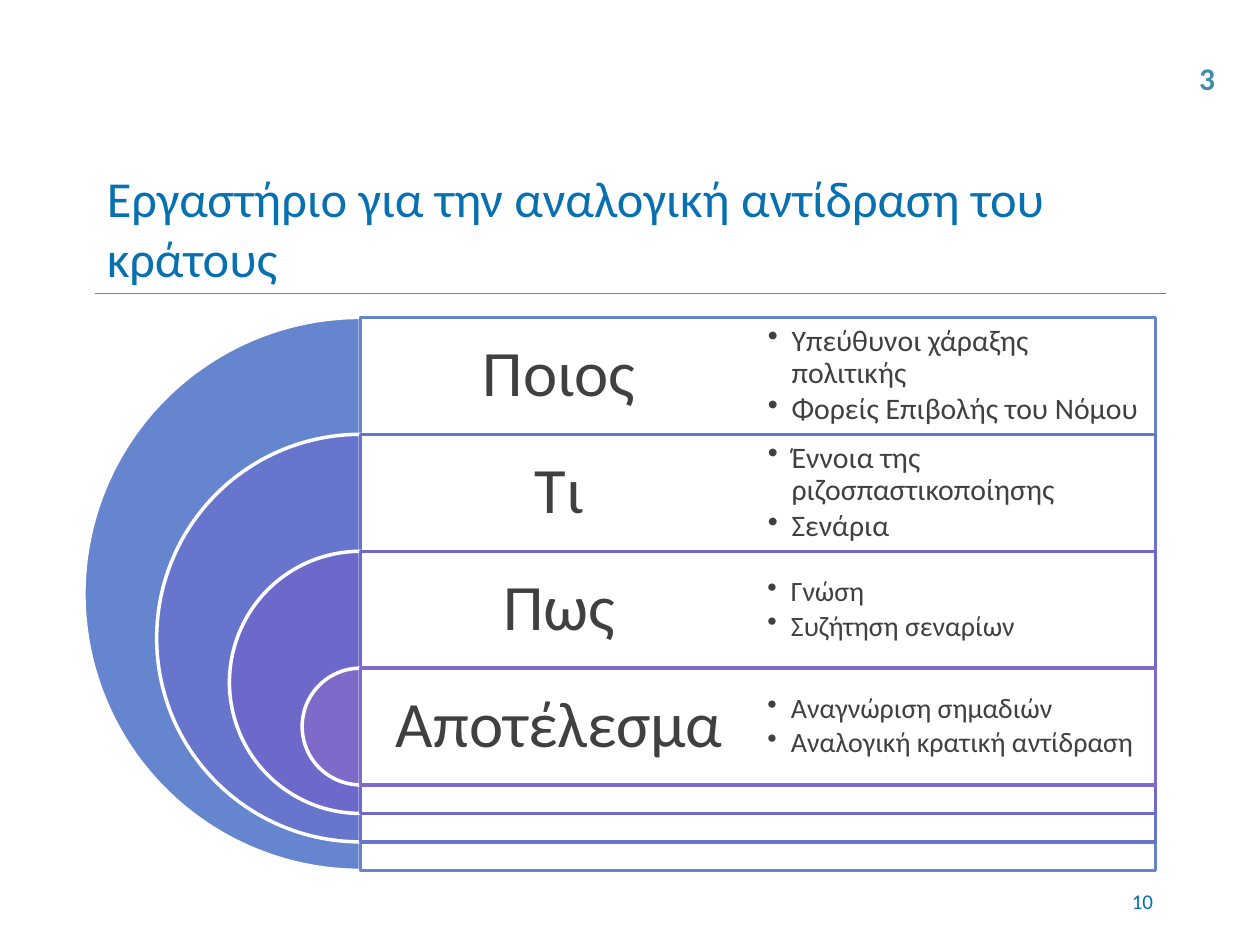
from lxml import etree
from pptx import Presentation
from pptx.dml.color import RGBColor
from pptx.enum import shapes, text
from pptx.oxml import ns
from pptx.util import Pt

FONT = "Calibri"
DARK, BLUE, WHITE = "404040", "0770B1", "FFFFFF"
CENTER_X, TOP, STEP = 206, 181.4, 66.8
PANEL_WIDTH = 454.3
OUTER_DIAMETER, DIAMETER_STEP = 316, 83.1

# Colour, heading, bullet size, bullets
LAYERS = [
    ("6585CF", "Ποιος", 17,
     ["Υπεύθυνοι χάραξης πολιτικής", "Φορείς Επιβολής του Νόμου"]),
    ("6775CD", "Τι", 17, ["Έννοια της ριζοσπαστικοποίησης", "Σενάρια"]),
    ("6C69CB", "Πως", 16, ["Γνώση", "Συζήτηση σεναρίων"]),
    ("7E6BC9", "Αποτέλεσμα", 16,
     ["Αναγνώριση σημαδιών", "Αναλογική κρατική αντίδραση"]),
]


def color(value):
    return RGBColor.from_string(value)


def add_child(parent, tag, **attributes):
    return etree.SubElement(parent, ns.qn(tag), attributes)


def add_shape(slide, kind, box, fill, line):
    shape = slide.shapes.add_shape(kind, *map(Pt, box))
    shape.shadow.inherit = False
    shape.fill.solid()
    shape.fill.fore_color.rgb = color(fill)
    shape.line.color.rgb = color(line)
    shape.line.width = Pt(2)
    return shape


def add_half_disc(slide, top, diameter, fill):
    box = (CENTER_X - diameter / 2, top, diameter, diameter)
    pie = add_shape(slide, shapes.MSO_SHAPE.PIE, box, fill, WHITE)
    # 90 and 270 degrees, in units of 100000/60000 degree
    pie.adjustments[0], pie.adjustments[1] = 54, 162


def add_panel(slide, top, height, line):
    box = (CENTER_X, top, PANEL_WIDTH, height)
    panel = add_shape(slide, shapes.MSO_SHAPE.RECTANGLE, box, WHITE, line)
    fill = panel.fill._xPr.find(ns.qn("a:solidFill"))
    add_child(fill[0], "a:alpha", val="90000")


def add_text(slide, box, lines, size, fill, align="LEFT", anchor="MIDDLE",
             inset=None, bold=False, wrap=True, bullets=False, spacing=None):
    frame = slide.shapes.add_textbox(*map(Pt, box)).text_frame
    frame.word_wrap = wrap
    frame.vertical_anchor = text.MSO_ANCHOR[anchor]
    if inset is not None:
        frame.margin_left = frame.margin_right = Pt(inset)
        frame.margin_top = frame.margin_bottom = Pt(inset)
    frame.text = "\n".join(lines)
    for paragraph in frame.paragraphs:
        paragraph.alignment = text.PP_ALIGN[align]
        if spacing:
            paragraph.line_spacing = spacing
        if bullets:
            paragraph.space_after = Pt(round(size * 0.15, 1))
            properties = paragraph._p.get_or_add_pPr()
            properties.set("marL", str(Pt(13.5)))
            properties.set("indent", str(-Pt(13.5)))
            add_child(properties, "a:buChar", char="•")
        for run in paragraph.runs:
            run.font.name = FONT
            run.font.size = Pt(size)
            run.font.bold = bold
            run.font.color.rgb = color(fill)
    return frame


def add_rule(slide, left, right, y):
    rule = slide.shapes.add_connector(
        shapes.MSO_CONNECTOR.STRAIGHT, Pt(left), Pt(y), Pt(right), Pt(y))
    rule.line.color.rgb = color("0BA7DF")
    rule.line.width = Pt(0.75)
    add_child(rule._element.spPr, "a:effectLst")


def main():
    presentation = Presentation()
    presentation.slide_width, presentation.slide_height = Pt(720), Pt(540)
    slide = presentation.slides.add_slide(presentation.slide_layouts[6])

    add_rule(slide, 54, 666, 167.8)

    # Nested half discs, each with its panel, heading and bullets
    half = PANEL_WIDTH / 2
    for index, (fill, heading, size, items) in enumerate(LAYERS):
        top = TOP + index * STEP
        diameter = OUTER_DIAMETER - index * DIAMETER_STEP
        add_half_disc(slide, top, diameter, fill)
        add_panel(slide, top, diameter, fill)
        add_text(slide, (CENTER_X, top, half, STEP), [heading], 37, DARK,
                 align="CENTER", inset=11, spacing=0.9)
        add_text(slide, (CENTER_X + half, top, half, STEP), items, size, DARK,
                 inset=size / 3, bullets=True, spacing=0.9)

    # Title, ending in a line break, and page numbers
    title = "Εργαστήριο για την αναλογική αντίδραση του κράτους\v"
    add_text(slide, (54, 113.8, 612, 54), [title], 28.8, BLUE)
    add_text(slide, (516, 500.4, 150, 28.8), ["10"], 12, BLUE, align="RIGHT")
    frame = add_text(slide, (678.2, 30.2, 23.8, 28.8), ["3"], 18, "3E8EA9",
                     anchor="TOP", bold=True, wrap=False)
    frame.auto_size = text.MSO_AUTO_SIZE.SHAPE_TO_FIT_TEXT

    presentation.save("out.pptx")


if __name__ == "__main__":
    main()
